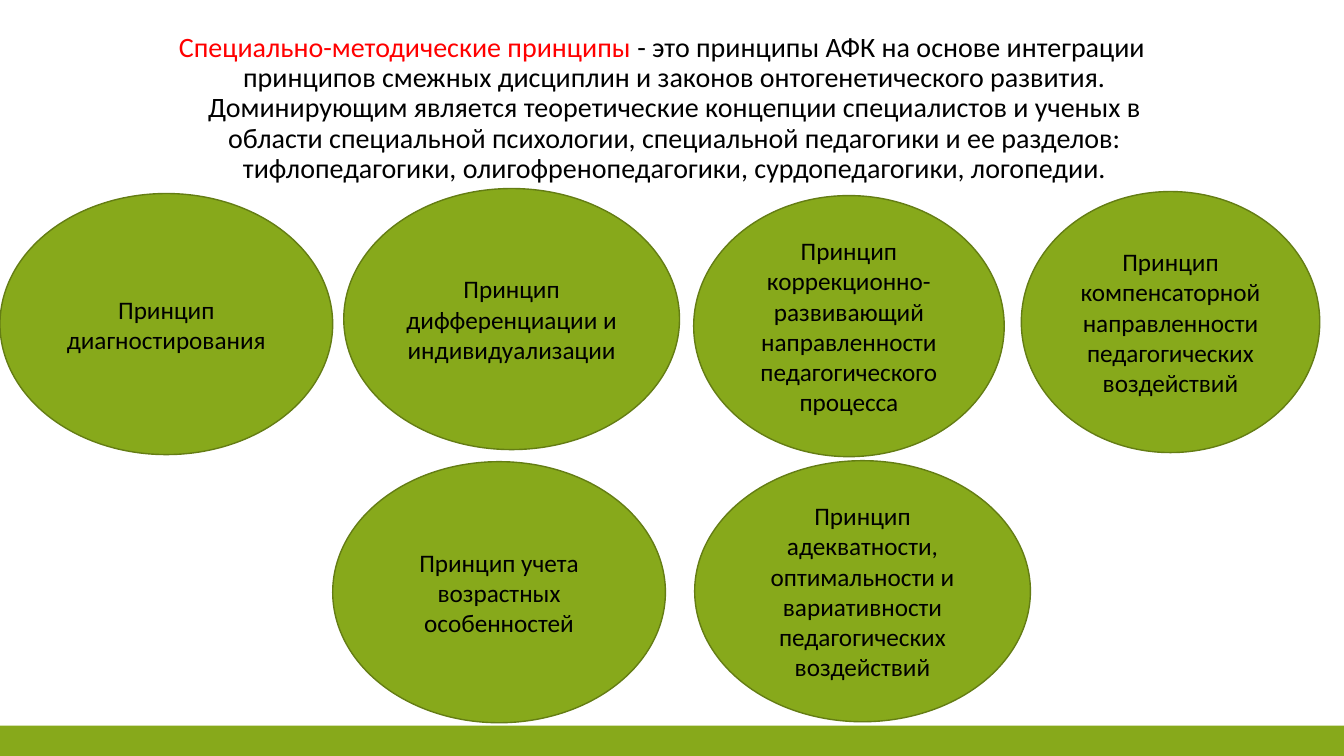
from lxml import etree
from pptx import Presentation
from pptx.dml.color import RGBColor
from pptx.enum import shapes, text
from pptx.oxml import ns
from pptx.util import Inches, Pt

GREEN = "87A91B"
EDGE = "647D14"
BLACK = "000000"
RED = "FF0000"
OVAL_H = 2.59

LEAD = "Специально-методические принципы "
BODY = (
    "- это принципы АФК на основе интеграции принципов смежных дисциплин "
    "и законов онтогенетического развития. Доминирующим является теоретические "
    "концепции специалистов и ученых в области специальной психологии, "
    "специальной педагогики и ее разделов: тифлопедагогики, "
    "олигофренопедагогики, сурдопедагогики, логопедии."
)
OVALS = [
    (6.89, 4.57, 3.33, "Принцип адекватности, оптимальности и вариативности "
                       "педагогических воздействий"),
    (3.3, 4.58, 3.3, "Принцип учета возрастных особенностей"),
    (0, 1.92, 3.3, "Принцип диагностирования"),
    (3.41, 1.87, 3.33, "Принцип дифференциации и индивидуализации"),
    (6.88, 1.94, 3.08, "Принцип коррекционно-развивающий направленности "
                       "педагогического процесса"),
    (10.13, 1.9, 2.96, "Принцип компенсаторной направленности "
                       "педагогических воздействий"),
]


def color(code):
    return RGBColor.from_string(code)


def assign(item, values):
    for name, value in values.items():
        setattr(item, name, value)


def place(shape, left, top, width, height):
    names = ("left", "top", "width", "height")
    sizes = map(Inches, (left, top, width, height))
    assign(shape, dict(zip(names, sizes)))


def add_run(para, words, size, code):
    run = para.add_run()
    run.text = words
    assign(run.font, {"name": "Calibri", "size": Pt(size)})
    run.font.color.rgb = color(code)


def add_shape(slide, kind, box):
    shape = slide.shapes.add_shape(kind, *map(Inches, box))
    shape.shadow.inherit = False
    shape.fill.solid()
    shape.fill.fore_color.rgb = color(GREEN)
    return shape


def add_bar(slide):
    bar = add_shape(slide, shapes.MSO_SHAPE.RECTANGLE, (0, 7.2, 13.33, 0.3))
    bar.line.fill.background()


def add_oval(slide, left, top, width, words):
    oval = add_shape(slide, shapes.MSO_SHAPE.OVAL, (left, top, width, OVAL_H))
    oval.line.color.rgb = color(EDGE)
    oval.line.width = Pt(1)
    frame = oval.text_frame
    assign(frame, {"word_wrap": True,
                   "vertical_anchor": text.MSO_ANCHOR.MIDDLE})
    para = frame.paragraphs[0]
    para.alignment = text.PP_ALIGN.CENTER
    add_run(para, words, 18, BLACK)


def fill_body(body):
    place(body, 1.54, 0.28, 10, 1.75)
    frame = body.text_frame
    assign(frame, {"word_wrap": True,
                   "auto_size": text.MSO_AUTO_SIZE.NONE,
                   "vertical_anchor": text.MSO_ANCHOR.TOP})
    para = frame.paragraphs[0]
    assign(para, {"alignment": text.PP_ALIGN.CENTER,
                  "line_spacing": 0.9,
                  "space_before": Pt(18)})
    props = para._p.get_or_add_pPr()
    props.set("marL", str(Inches(0.3)))
    props.set("indent", str(Inches(-0.25)))
    etree.SubElement(props, ns.qn("a:buNone"))
    add_run(para, LEAD, 20, RED)
    add_run(para, BODY, 20, BLACK)


def main():
    deck = Presentation()
    assign(deck, {"slide_width": Inches(13.33), "slide_height": Inches(7.5)})
    slide = deck.slides.add_slide(deck.slide_layouts[1])
    title = slide.shapes.title
    title.element.getparent().remove(title.element)
    add_bar(slide)
    fill_body(slide.placeholders[1])
    for oval in OVALS:
        add_oval(slide, *oval)
    deck.save("out.pptx")


if __name__ == "__main__":
    main()
